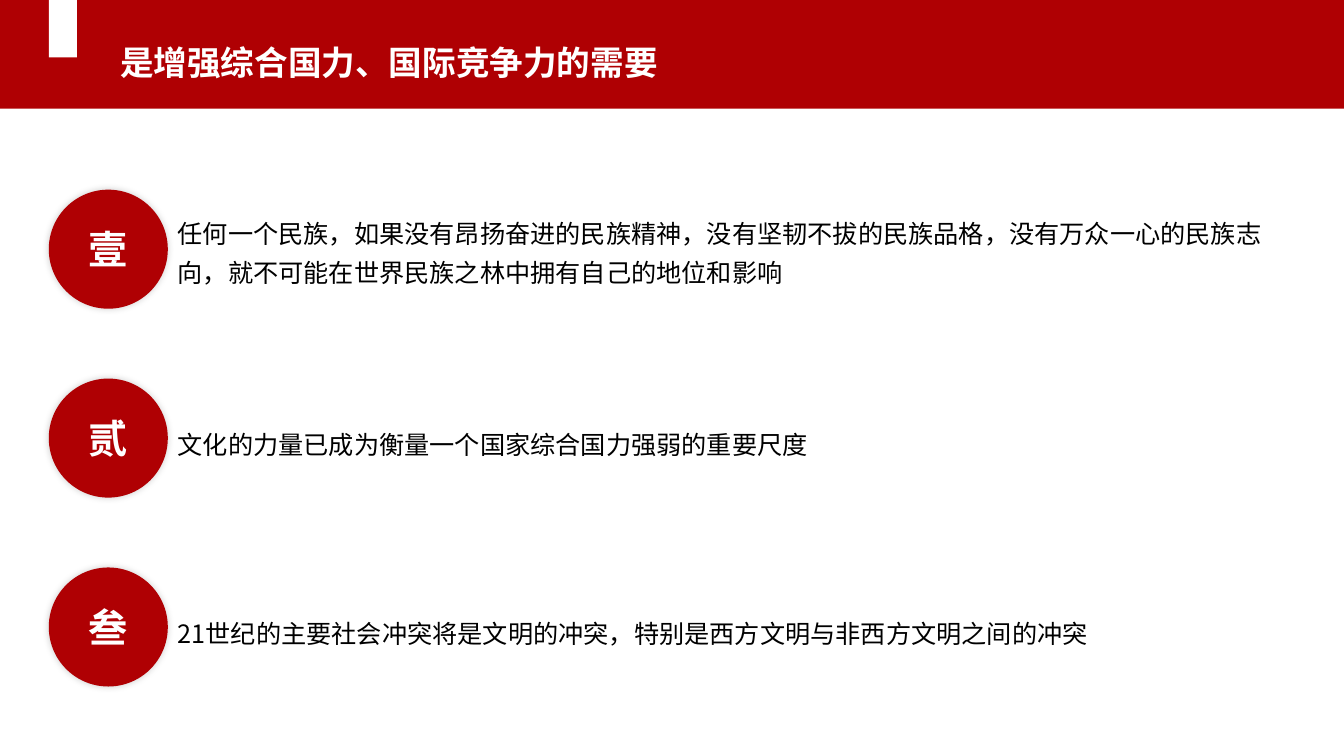
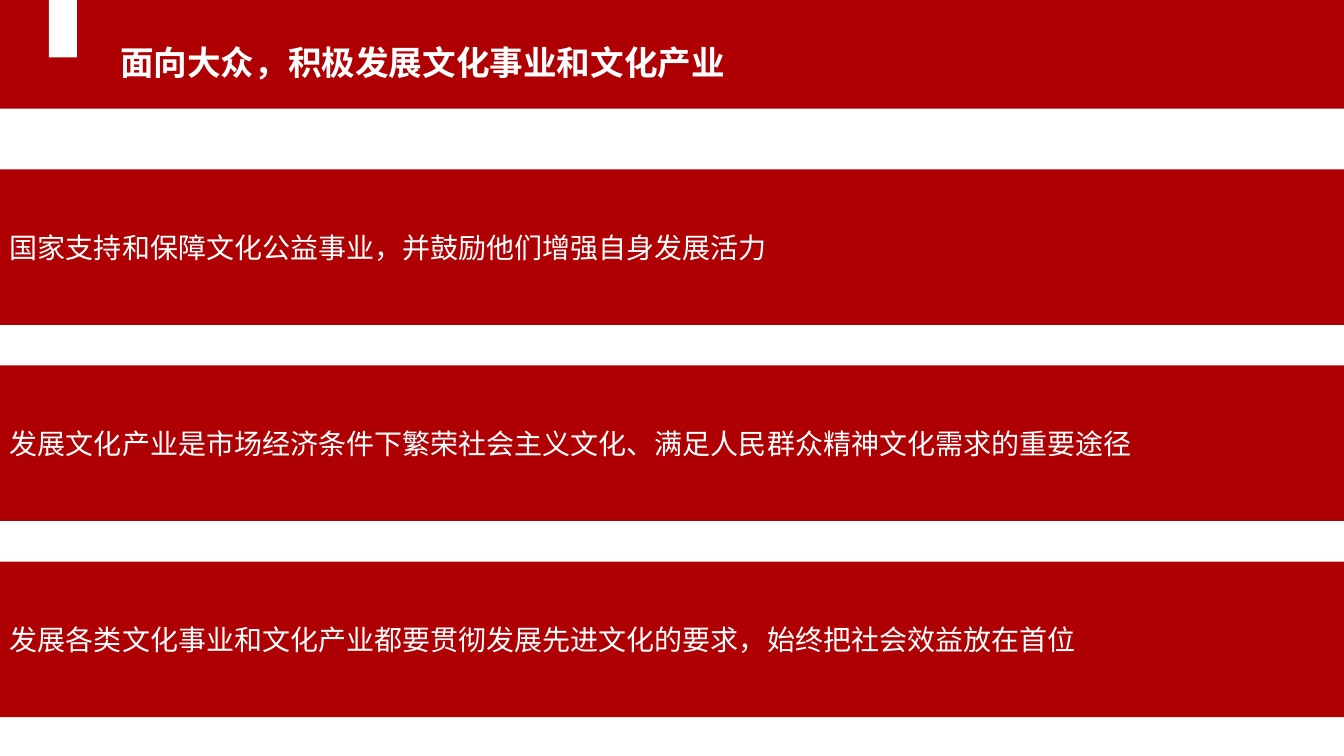
"""Build two slides on culture: numbered points and full-width bands."""
from lxml import etree
from pptx import Presentation
from pptx import util as u
from pptx.dml.color import RGBColor
from pptx.enum import shapes, text
from pptx.oxml import ns

HUES = {"red": "AF0003", "white": "FFFFFF", "black": "000000"}
FACE = "Noto Sans CJK SC"
WIDE, HIGH = 33.87, 19.05
KIND = shapes.MSO_SHAPE
MID = text.MSO_ANCHOR.MIDDLE
TOP = text.MSO_ANCHOR.TOP
LEFT = text.PP_ALIGN.LEFT
MAIN = text.PP_ALIGN.CENTER

TITLE = {"size": 24, "bold": True, "hue": "white"}
MARK = {"size": 28, "bold": True, "hue": "white"}
POINT = {"size": 18, "bold": False, "hue": "black"}
BAND = {"size": 20, "bold": False, "hue": "white"}


def draw(host, kind, box, hue):
    """Add a plain filled shape."""
    shape = host.add_shape(kind, *map(u.Cm, box))
    shape.shadow.inherit = False
    shape.fill.solid()
    shape.fill.fore_color.rgb = RGBColor.from_string(HUES[hue])
    shape.line.fill.background()
    return shape


def write(shape, words, look, align=LEFT, anchor=MID, space=None, fit=text.MSO_AUTO_SIZE.NONE):
    """Put one styled paragraph into a shape."""
    frame = shape.text_frame
    for key, value in {"word_wrap": True, "auto_size": fit, "vertical_anchor": anchor}.items():
        setattr(frame, key, value)
    para = frame.paragraphs[0]
    for key, value in {"alignment": align, "line_spacing": space}.items():
        setattr(para, key, value)
    run = para.add_run()
    run.text = words
    for key, value in {"name": FACE, "size": u.Pt(look["size"]), "bold": look["bold"]}.items():
        setattr(run.font, key, value)
    run.font.color.rgb = RGBColor.from_string(HUES[look["hue"]])
    etree.SubElement(run._r.get_or_add_rPr(), ns.qn("a:ea"), typeface=FACE)


GROW = {"anchor": TOP, "space": 1.3, "fit": text.MSO_AUTO_SIZE.SHAPE_TO_FIT_TEXT}

deck = Presentation()
deck.slide_width, deck.slide_height = u.Cm(WIDE), u.Cm(HIGH)

pages = []
for title, width in [
    ("是增强综合国力、国际竞争力的需要", 15.11),
    ("面向大众，积极发展文化事业和文化产业", 16.1),
]:
    page = deck.slides.add_slide(deck.slide_layouts[6]).shapes
    draw(page, KIND.RECTANGLE, (0, 0, WIDE, 2.74), "red")
    draw(page, KIND.RECTANGLE, (1.23, 0, 0.71, 1.45), "white")
    label = page.add_textbox(*map(u.Cm, (2.78, 0.64, width, 1.45)))
    write(label, title, TITLE, **GROW)
    pages.append(page)

points = [
    ("壹", "任何一个民族，如果没有昂扬奋进的民族精神，没有坚韧不拔的民族品格，"
     "没有万众一心的民族志向，就不可能在世界民族之林中拥有自己的地位和影响", 28.4, 2.26, 0.37),
    ("贰", "文化的力量已成为衡量一个国家综合国力强弱的重要尺度", 17.15, 1.2, 0.93),
    ("叁", "21世纪的主要社会冲突将是文明的冲突，特别是西方文明与非西方文明之间的冲突", 23.88, 1.2, 0.93),
]
for row, (mark, words, width, height, drop) in enumerate(points):
    top = 4.78 + 4.76 * row
    group = pages[0].add_group_shape().shapes
    disc = draw(group, KIND.OVAL, (1.23, top, 3, 3), "red")
    glow = etree.SubElement(
        disc._element.spPr.find(ns.qn("a:effectLst")), ns.qn("a:outerShdw"),
        blurRad=str(u.Pt(5)), dist="0", dir="0", algn="ctr", rotWithShape="0")
    tint = etree.SubElement(glow, ns.qn("a:srgbClr"), val=HUES["black"])
    etree.SubElement(tint, ns.qn("a:alpha"), val="19000")
    write(disc, mark, MARK, align=MAIN)
    note = group.add_textbox(*map(u.Cm, (4.23, top + drop, width, height)))
    write(note, words, POINT, **GROW)

bands = [
    "国家支持和保障文化公益事业，并鼓励他们增强自身发展活力",
    "发展文化产业是市场经济条件下繁荣社会主义文化、满足人民群众精神文化需求的重要途径",
    "发展各类文化事业和文化产业都要贯彻发展先进文化的要求，始终把社会效益放在首位",
]
for row, words in enumerate(bands):
    band = draw(pages[1], KIND.RECTANGLE, (0, 4.27 + 4.94 * row, WIDE, 3.92), "red")
    write(band, words, BAND)

deck.save("out.pptx")
